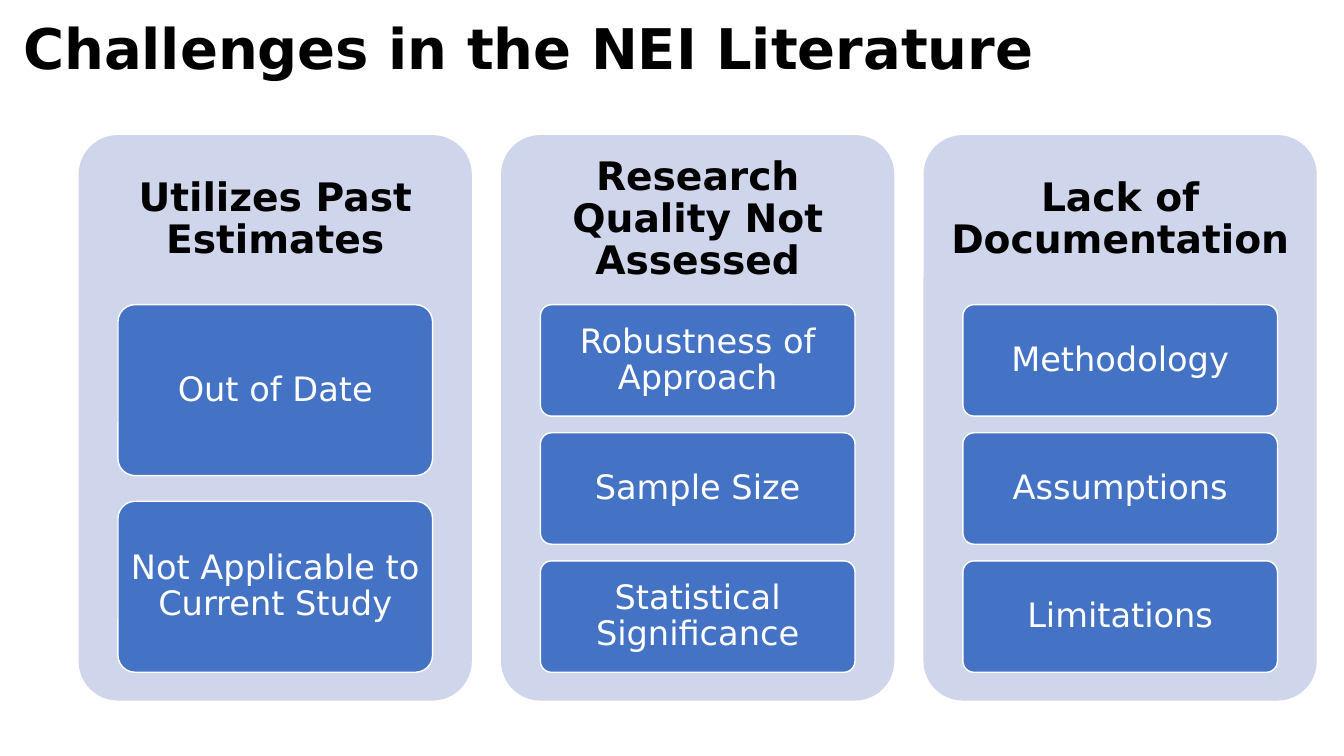
from pptx import Presentation
from pptx.dml.color import RGBColor
from pptx.enum.shapes import MSO_SHAPE
from pptx.enum.text import MSO_ANCHOR, MSO_AUTO_SIZE, PP_ALIGN
from pptx.util import Inches, Pt

BLACK = RGBColor(0x00, 0x00, 0x00)
WHITE = RGBColor(0xFF, 0xFF, 0xFF)
PALE = RGBColor(0xCF, 0xD5, 0xEA)
BLUE = RGBColor(0x44, 0x72, 0xC4)

TITLE = {"size": Pt(40), "bold": True, "name": "DejaVu Sans"}
HEAD = {"size": Pt(28), "bold": True, "name": "DejaVu Sans"}
ITEM = {"size": Pt(24), "bold": False, "name": "DejaVu Sans"}

COLUMNS = {
    "Utilizes Past Estimates": ["Out of Date", "Not Applicable to Current Study"],
    "Research Quality Not Assessed": [
        "Robustness of Approach", "Sample Size", "Statistical Significance"],
    "Lack of Documentation": ["Methodology", "Assumptions", "Limitations"],
}


def write(shape, text, style, color, inset=(0.1, 0.05), align=PP_ALIGN.CENTER):
    frame = shape.text_frame
    side, edge = map(Inches, inset)
    layout = {
        "text": text, "word_wrap": True, "auto_size": MSO_AUTO_SIZE.NONE,
        "vertical_anchor": MSO_ANCHOR.MIDDLE,
        "margin_left": side, "margin_right": side,
        "margin_top": edge, "margin_bottom": edge,
    }
    for key, value in layout.items():
        setattr(frame, key, value)
    para = frame.paragraphs[0]
    para.alignment, para.line_spacing = align, 0.9
    font = para.runs[0].font
    for key, value in style.items():
        setattr(font, key, value)
    font.color.rgb = color


def add_card(slide, box, fill, line=None):
    card = slide.shapes.add_shape(MSO_SHAPE.ROUNDED_RECTANGLE, *map(Inches, box))
    card.adjustments[0] = 0.1
    card.shadow.inherit = False
    card.fill.solid()
    card.fill.fore_color.rgb = fill
    if line is None:
        card.line.fill.background()
    else:
        card.line.color.rgb = line
        card.line.width = Pt(1)
    return card


def add_title(slide, box, text):
    title = slide.shapes.title
    title.left, title.top, title.width, title.height = map(Inches, box)
    write(title, text, TITLE, BLACK, align=PP_ALIGN.LEFT)


def add_column(slide, box, head, items):
    """Panel with a heading in its top 30% and item cards in the next 65%."""
    left, top, width, height = box
    add_card(slide, box, PALE)
    label = slide.shapes.add_textbox(*map(Inches, (left, top, width, 0.3 * height)))
    write(label, head, HEAD, BLACK, inset=(0.12, 0.12))

    count = len(items)
    tall = 0.65 * height / (count + 0.15 * (count - 1))
    for row, item in enumerate(items):
        y = top + 0.3 * height + row * 1.15 * tall
        card = add_card(slide, (left + 0.1 * width, y, 0.8 * width, tall), BLUE, WHITE)
        write(card, item, ITEM, WHITE, inset=(0.05, 0.05))


def main():
    deck = Presentation()
    deck.slide_width, deck.slide_height = Inches(13.33), Inches(7.5)
    slide = deck.slides.add_slide(deck.slide_layouts[5])
    add_title(slide, (0.13, -0.22, 11.5, 1.45), "Challenges in the NEI Literature")
    for col, (head, items) in enumerate(COLUMNS.items()):
        add_column(slide, (0.78 + 4.19 * col, 1.34, 3.9, 5.61), head, items)
    deck.save("out.pptx")


if __name__ == "__main__":
    main()
